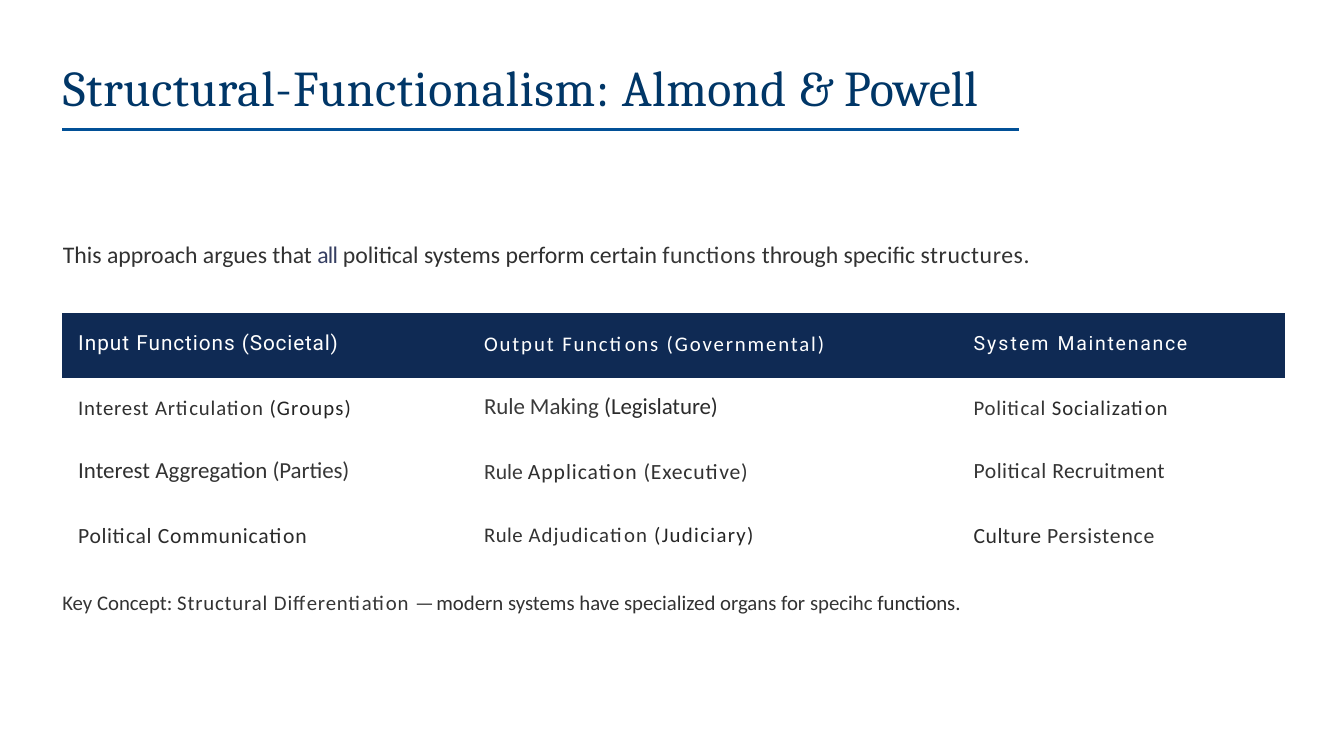
from pptx import Presentation
from pptx.dml.color import RGBColor as RGB
from pptx.enum.shapes import MSO_CONNECTOR as CONN
from pptx.enum.text import MSO_ANCHOR as ANCHOR, MSO_AUTO_SIZE as FIT, PP_ALIGN as ALIGN
from pptx.oxml.ns import qn
from pptx.util import Inches, Pt
from lxml.etree import SubElement

COLORS = {
    "navy": "003667", "rule": "015097", "header": "0F2A54", "white": "FFFFFF",
    "accent": "363F62", "black": "242424", "dark": "2B2B2B", "ink": "2F2F2F",
    "text": "323232", "grey": "363636", "pale": "3A3A3A",
}
NO_STYLE = "{2D5ABB26-0587-4C30-8999-92F81FD0307C}"

TITLE = [("Structural-", "navy", 0.7), ("Functionalism: ", "navy", 0.8),
         ("Almond ", "navy", 0.6), ("& ", "navy", 0), ("Powell", "navy", -0.1)]
INTRO = [("This ", "ink", 0), ("approach argues that ", "text", 0),
         ("all ", "accent", -0.8), ("political ", "text", 0),
         ("systems perform certain ", "ink", 0), ("functions ", "grey", 0.5),
         ("through ", "text", -0.1), ("specific ", "text", 0), ("structures.", "text", 0.7)]
KEY = [("Key ", "grey", 0), ("Concept: ", "text", 0), ("Structural ", "text", 1),
       ("Differentiation ", "grey", 1), ("— ", "grey", -2.7), ("modern ", "ink", 0),
       ("systems have specialized organs for ", "text", 0), ("specihc ", "grey", 0),
       ("functions.", "dark", -0.1)]

COLUMNS = [(5.91, 0.27), (7.86, 1), (6.25, 1.15)]
ROW_HEIGHTS = [1.06, 1.05, 1.06, 0.7]
ROWS = [
    [("Roboto", 24.5, 0.3, [("Input ", "white", 1.2), ("Functions ", "white", 1.1),
                            ("(Societal)", "white", 1)]),
     ("Calibri", 24.5, 0.3, [("Output ", "white", 2.2), ("Functions ", "white", 2.1),
                             ("(Governmental)", "white", 2.2)]),
     ("Roboto", 23, 0.32, [("System ", "white", 2.4), ("Maintenance", "white", 2)])],
    [("Calibri", 24.5, 0.29, [("Interest ", "ink", 0.9), ("Articulation ", "text", 1),
                              ("(Groups)", "black", 1.4)]),
     ("Calibri", 27, 0.25, [("Rule ", "pale", -0.1), ("Making ", "pale", 0),
                            ("(Legislature)", "dark", -0.1)]),
     ("Calibri", 24.5, 0.29, [("Political ", "grey", 0.9), ("Socialization", "dark", 1.1)])],
    [("Calibri", 27, 0.24, [("Interest ", "ink", 0), ("Aggregation ", "text", 0),
                            ("(Parties)", "grey", -0.1)]),
     ("Calibri", 25.5, 0.27, [("Rule ", "pale", 0), ("Application ", "ink", 1.1),
                              ("(Executive)", "text", 0.9)]),
     ("Calibri", 25.5, 0.26, [("Political ", "grey", 0.6), ("Recruitment", "text", 0.4)])],
    [("Calibri", 25.5, 0.26, [("Political ", "ink", 0.7), ("Communication", "dark", 0.9)]),
     ("Calibri", 24.5, 0.27, [("Rule ", "text", 0.6), ("Adjudication ", "text", 1.3),
                              ("(Judiciary)", "black", 1.6)]),
     ("Calibri", 25.5, 0.26, [("Culture ", "dark", 0.6), ("Persistence", "text", 0.9)])],
]


class Deck:
    """Hold the style and the current slide."""

    def __init__(self, width, height):
        self.prs = Presentation()
        self.prs.slide_width, self.prs.slide_height = Inches(width), Inches(height)
        self.s = self.prs.slides.add_slide(self.prs.slide_layouts[5])

    def color(self, name):
        """Return a named colour."""
        return RGB.from_string(COLORS[name])

    def add_runs(self, tf, runs, font, size):
        """Set one left-aligned paragraph run by run."""
        p = tf.paragraphs[0]
        p.alignment = ALIGN.LEFT
        for text, color, spacing in runs:
            r = p.add_run()
            r.text = text
            r.font.name, r.font.size = font, Pt(size)
            r.font.color.rgb = self.color(color)
            if spacing:
                r.font._element.set("spc", str(round(spacing * 100)))

    def pad(self, box, left, top):
        """Set the margins of a text frame or a cell."""
        box.margin_left, box.margin_top = Inches(left), Inches(top)
        box.margin_right = box.margin_bottom = 0
        box.vertical_anchor = ANCHOR.TOP

    def fill_box(self, sp, runs, font, size, left, top):
        """Format a box and add its text."""
        tf = sp.text_frame
        tf.word_wrap, tf.auto_size = True, FIT.NONE
        self.pad(tf, left, top)
        self.add_runs(tf, runs, font, size)

    def title(self, x, y, w, h, runs):
        """Place the title."""
        sp = self.s.shapes.title
        sp.left, sp.top, sp.width, sp.height = map(Inches, (x, y, w, h))
        self.fill_box(sp, runs, "Cambria", 59, 0.03, 0.11)

    def text(self, x, y, w, h, runs, size):
        """Add a line of body text."""
        sp = self.s.shapes.add_textbox(*map(Inches, (x, y, w, h)))
        self.fill_box(sp, runs, "Calibri", size, 0.01, 0.02)

    def rule(self, x, y, w):
        """Add a horizontal rule."""
        sp = self.s.shapes.add_connector(
            CONN.STRAIGHT, Inches(x), Inches(y), Inches(x + w), Inches(y))
        sp.line.color.rgb, sp.line.width = self.color("rule"), Pt(3.71)
        SubElement(sp._element.spPr, qn("a:effectLst"))

    def table(self, x, y, columns, heights, rows):
        """Add a plain table with a filled header row."""
        width = sum(w for w, _ in columns)
        frame = self.s.shapes.add_table(
            len(rows), len(columns), *map(Inches, (x, y, width, sum(heights))))
        table = frame.table
        table.first_row = table.horz_banding = False
        table._tbl.tblPr.find(qn("a:tableStyleId")).text = NO_STYLE
        for column, (w, _) in zip(table.columns, columns):
            column.width = Inches(w)
        for i, (row, height) in enumerate(zip(rows, heights)):
            table.rows[i].height = Inches(height)
            for j, (font, size, top, runs) in enumerate(row):
                cell = table.cell(i, j)
                self.pad(cell, columns[j][1], top)
                if i == 0:
                    cell.fill.solid()
                    cell.fill.fore_color.rgb = self.color("header")
                else:
                    cell.fill.background()
                self.add_runs(cell.text_frame, runs, font, size)


def main():
    """Build the slide."""
    deck = Deck(21.99, 12.37)
    deck.rule(1.02, 2.12, 15.65)
    deck.table(1.01, 5.12, COLUMNS, ROW_HEIGHTS, ROWS)
    deck.title(1, 0.81, 19.98, 1.12, TITLE)
    deck.text(1.02, 3.9, 16.17, 0.5, INTRO, 28)
    deck.text(1.01, 9.63, 15.34, 0.44, KEY, 24.5)
    deck.prs.save("out.pptx")


if __name__ == "__main__":
    main()
